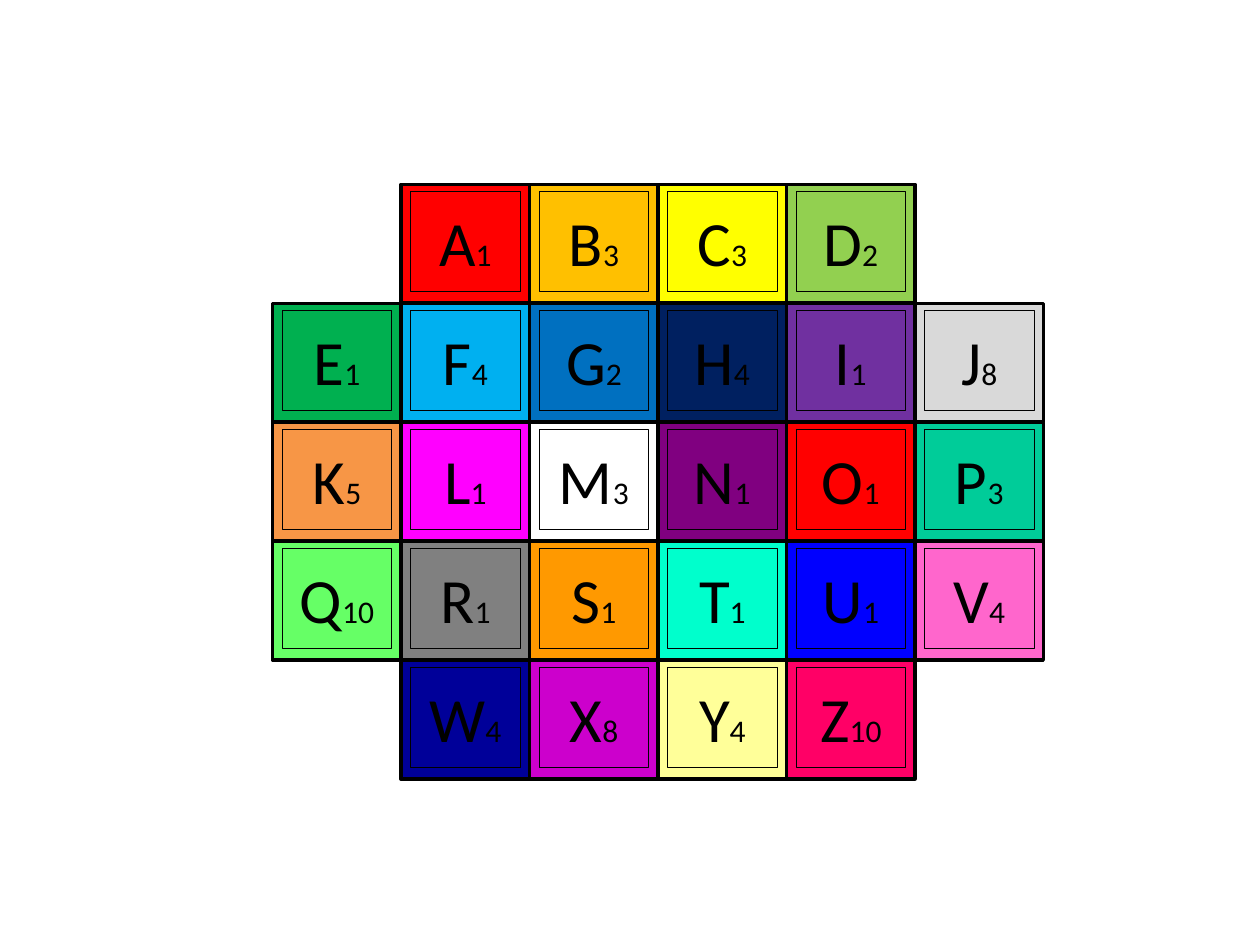
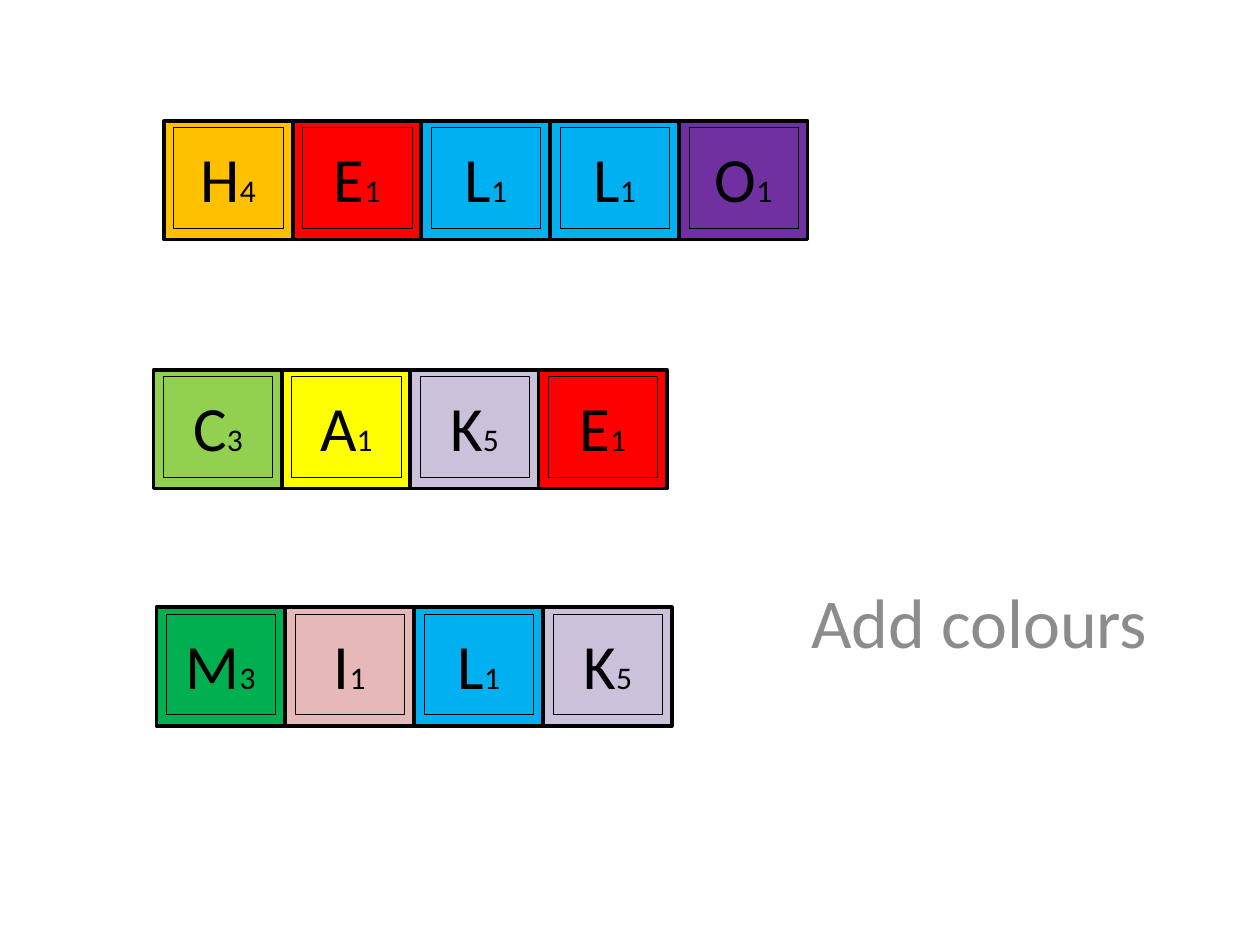
from dataclasses import dataclass

from pptx import Presentation
from pptx.dml.color import RGBColor
from pptx.enum import shapes, text
from pptx.util import Pt

FONT = "Calibri"
BLACK = "000000"
GREY = "8C8C8C"
RED = "FF0000"
AMBER = "FFC000"
YELLOW = "FFFF00"
LIME = "92D050"
GREEN = "00B050"
SKY = "00B0F0"
PURPLE = "7030A0"
LILAC = "CCC1DA"
ROSE = "E6B9B8"

TILE_WIDTH, TILE_HEIGHT = 73.4, 67.9
FACE_WIDTH, FACE_HEIGHT = 62.6, 57.6
FACE_LEFT, FACE_TOP = 5.5, 3.8

GRID_LEFT, GRID_TOP = 155.8, 105.3
COLUMN_PITCH, ROW_PITCH = 73.4, 68

LETTERS_BY_SCORE = {
    1: "AEILNORSTU",
    2: "DG",
    3: "BCMP",
    4: "FHVWY",
    5: "K",
    8: "JX",
    10: "QZ",
}
SCORES = {
    letter: score
    for score, letters in LETTERS_BY_SCORE.items()
    for letter in letters
}


@dataclass(frozen=True)
class TileRow:
    letters: str
    colours: tuple[str, ...]
    left: float
    top: float
    pitch: float = COLUMN_PITCH


@dataclass(frozen=True)
class AlphabetRow:
    letters: str
    colours: tuple[str, ...]
    first_column: int = 0


ALPHABET = (
    AlphabetRow("ABCD", (RED, AMBER, YELLOW, LIME), 1),
    AlphabetRow("EFGHIJ", (GREEN, SKY, "0070C0", "002060", PURPLE, "D9D9D9")),
    AlphabetRow("KLMNOP", ("F79646", "FF00FF", "FFFFFF", "800080", RED, "00CC99")),
    AlphabetRow("QRSTUV", ("66FF66", "808080", "FF9900", "00FFCC", "0000FF", "FF66CC")),
    AlphabetRow("WXYZ", ("000099", "CC00CC", "FFFF99", "FF0066"), 1),
)

WORDS = (
    TileRow("HELLO", (AMBER, RED, SKY, SKY, PURPLE), 93.7, 69, 73.6),
    TileRow("CAKE", (LIME, YELLOW, LILAC, RED), 87.8, 211.3, 73.3),
    TileRow("MILK", (GREEN, ROSE, SKY, LILAC), 89.4, 347, 73.7),
)


def rgb(colour: str) -> RGBColor:
    return RGBColor.from_string(colour)


def add_text(paragraph, content: str, *, size: float, colour: str = BLACK,
             align=text.PP_ALIGN.CENTER) -> None:
    paragraph.alignment = align
    run = paragraph.add_run()
    run.text = content
    run.font.name = FONT
    run.font.size = Pt(size)
    run.font.color.rgb = rgb(colour)


def add_square(group, left: float, top: float, width: float, height: float,
               colour: str, line_width: float):
    square = group.shapes.add_shape(
        shapes.MSO_SHAPE.RECTANGLE, Pt(left), Pt(top), Pt(width), Pt(height))
    square.shadow.inherit = False
    square.fill.solid()
    square.fill.fore_color.rgb = rgb(colour)
    square.line.color.rgb = rgb(BLACK)
    square.line.width = Pt(line_width)
    return square


def add_tile(slide, letter: str, colour: str, left: float, top: float) -> None:
    group = slide.shapes.add_group_shape()
    add_square(group, left, top, TILE_WIDTH, TILE_HEIGHT, colour, 2)
    face = add_square(group, left + FACE_LEFT, top + FACE_TOP,
                      FACE_WIDTH, FACE_HEIGHT, colour, 0.25)
    face.text_frame.vertical_anchor = text.MSO_ANCHOR.MIDDLE
    paragraph = face.text_frame.paragraphs[0]
    add_text(paragraph, letter, size=36)
    add_text(paragraph, str(SCORES[letter]), size=18)


def add_tile_row(slide, row: TileRow) -> None:
    for index, (letter, colour) in enumerate(zip(row.letters, row.colours)):
        add_tile(slide, letter, colour, row.left + index * row.pitch, row.top)


def add_alphabet_slide(presentation) -> None:
    slide = presentation.slides.add_slide(presentation.slide_layouts[6])
    for index, row in enumerate(ALPHABET):
        left = GRID_LEFT + row.first_column * COLUMN_PITCH
        top = GRID_TOP + index * ROW_PITCH
        add_tile_row(slide, TileRow(row.letters, row.colours, left, top))


def add_words_slide(presentation) -> None:
    slide = presentation.slides.add_slide(presentation.slide_layouts[0])
    title = slide.shapes.title.element
    title.getparent().remove(title)
    for word in WORDS:
        add_tile_row(slide, word)
    subtitle = slide.placeholders[1]
    subtitle.left, subtitle.top = Pt(456.5), Pt(327)
    subtitle.width, subtitle.height = Pt(238.3), Pt(138.2)
    add_text(subtitle.text_frame.paragraphs[0], "Add colours", size=40,
             colour=GREY, align=text.PP_ALIGN.LEFT)


def main() -> None:
    presentation = Presentation()
    presentation.slide_width, presentation.slide_height = Pt(720), Pt(540)
    add_alphabet_slide(presentation)
    add_words_slide(presentation)
    presentation.save("out.pptx")


if __name__ == "__main__":
    main()
